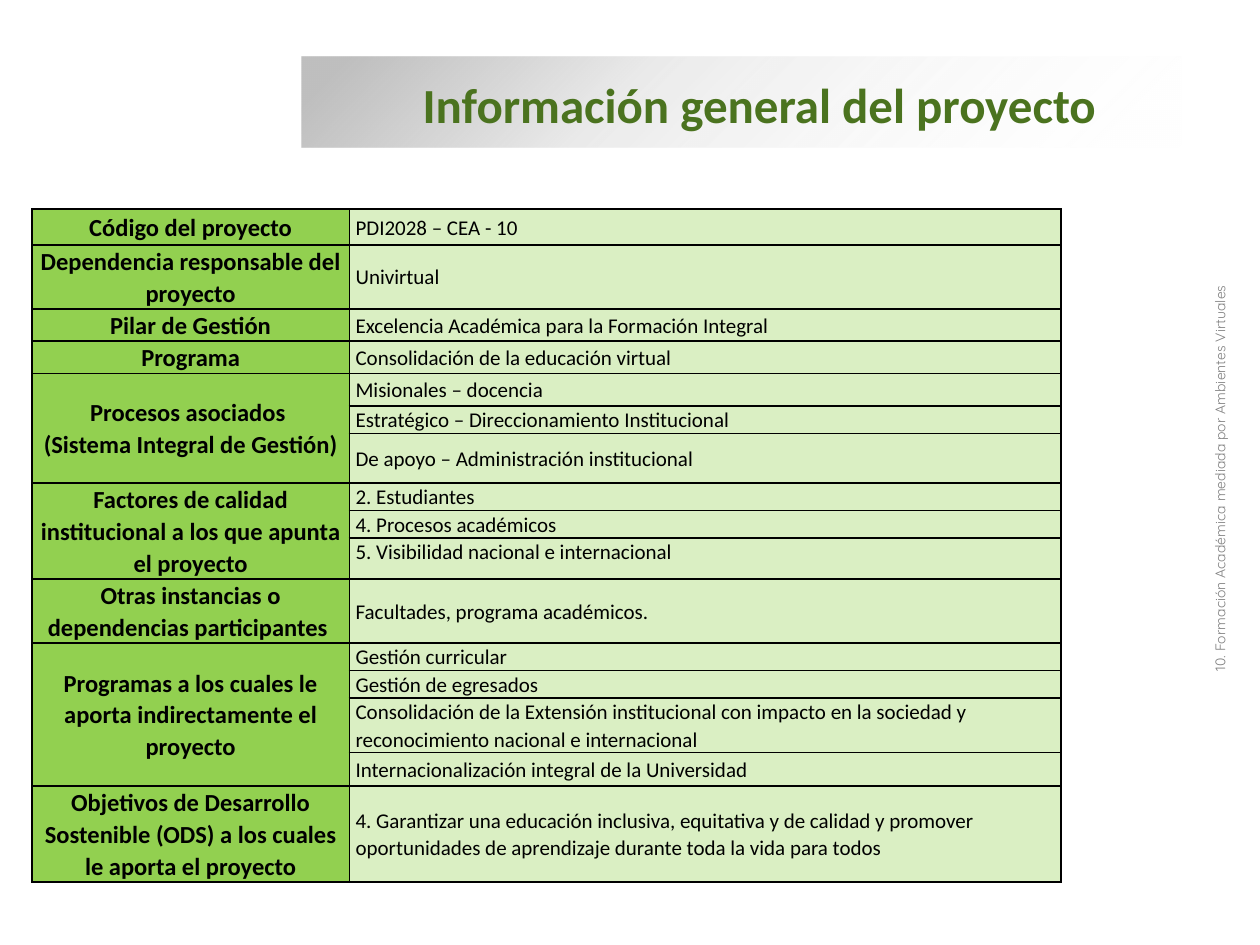
from collections import namedtuple
from dataclasses import dataclass

from lxml import etree
from pptx import Presentation
from pptx.dml.color import RGBColor
from pptx.enum.shapes import MSO_SHAPE as Shape
from pptx.enum.text import MSO_ANCHOR as Anchor, MSO_AUTO_SIZE as AutoSize, PP_ALIGN as Align
from pptx.oxml import parse_xml
from pptx.oxml.ns import nsdecls, qn
from pptx.util import Pt

Box = namedtuple("Box", "left top width height")


@dataclass(frozen=True)
class Theme:
    body_font: str = "Calibri"
    side_font: str = "Quicksand"
    title_size: float = 28
    label_size: float = 14
    value_size: float = 12
    side_size: float = 8
    title: str = "4B731F"
    text: str = "000000"
    side: str = "808080"
    label_fill: str = "92D050"
    value_fill: str = "DAEFC3"
    border: str = "000000"
    band: str = "BFBFBF"
    band_end: str = "FFFFFF"


THEME = Theme()

SECTIONS = [
    ("Código del proyecto", [("PDI2028 – CEA - 10", 20.5)]),
    ("Dependencia responsable del proyecto", [("Univirtual", 36.5)]),
    ("Pilar de Gestión", [("Excelencia Académica para la Formación Integral", 18.5)]),
    ("Programa", [("Consolidación de la educación virtual", 18.5)]),
    ("Procesos asociados \v(Sistema Integral de Gestión)", [
        ("Misionales – docencia", 18.5),
        ("Estratégico – Direccionamiento Institucional", 15.5),
        ("De apoyo – Administración institucional", 28.5),
    ]),
    ("Factores de calidad institucional a los que apunta el proyecto", [
        ("2. Estudiantes", 15.5),
        ("4. Procesos académicos", 15.5),
        ("5. Visibilidad nacional e internacional", 23.5),
    ]),
    ("Otras instancias o dependencias participantes ",
     [("Facultades, programa académicos.", 36.5)]),
    ("Programas a los cuales le aporta indirectamente el proyecto", [
        ("Gestión curricular", 15.5),
        ("Gestión de egresados", 15.5),
        ("Consolidación de la Extensión institucional con impacto en la sociedad y "
         "reconocimiento nacional e internacional", 31),
        ("Internacionalización integral de la Universidad", 19),
    ]),
    ("Objetivos de Desarrollo Sostenible (ODS) a los cuales le aporta el proyecto", [
        ("4. Garantizar una educación inclusiva, equitativa y de calidad y promover "
         "oportunidades de aprendizaje durante toda la vida para todos", 55),
    ]),
]
TOP_ALIGNED = {"4. Procesos académicos", "5. Visibilidad nacional e internacional"}
JUSTIFIED = {"Facultades, programa académicos."}


def points(box):
    return [Pt(length) for length in box]


def write(frame, text, font, size, color, bold=False, align=Align.LEFT):
    para = frame.paragraphs[0]
    para.text = text
    para.alignment = align
    para.font.name = font
    para.font.size = Pt(size)
    para.font.bold = bold
    para.font.color.rgb = RGBColor.from_string(color)
    return para


def add_label(shapes, box, text, font, size, color, **style):
    label = shapes.add_textbox(*points(box))
    frame = label.text_frame
    frame.word_wrap = True
    frame.auto_size = AutoSize.SHAPE_TO_FIT_TEXT
    write(frame, text, font, size, color, **style)
    return label


def fade(shape):
    stops = [(5, THEME.band, 100), (37, THEME.band, 31), (100, THEME.band_end, 0)]
    marks = "".join(
        f'<a:gs pos="{place * 1000}"><a:srgbClr val="{color}">'
        f'<a:alpha val="{alpha * 1000}"/></a:srgbClr></a:gs>'
        for place, color, alpha in stops
    )
    gradient = parse_xml(
        f'<a:gradFill {nsdecls("a")} rotWithShape="1"><a:gsLst>{marks}</a:gsLst>'
        '<a:lin ang="2700000" scaled="0"/></a:gradFill>'
    )
    shape._element.spPr.find(qn("a:prstGeom")).addnext(gradient)


def add_title(page, box):
    group = page.shapes.add_group_shape()
    band = group.shapes.add_shape(Shape.RECTANGLE, *points(box))
    band.shadow.inherit = False
    band.line.fill.background()
    fade(band)
    text_box = Box(box.left + 62, box.top + 6.5, 446.5, 41)
    title = add_label(group.shapes, text_box, "Información general del proyecto",
                      THEME.body_font, THEME.title_size, THEME.title, bold=True)
    title.text_frame.vertical_anchor = Anchor.MIDDLE


def add_borders(cell):
    properties = cell._tc.get_or_add_tcPr()
    for side in ("lnL", "lnR", "lnT", "lnB"):
        line = etree.SubElement(properties, qn(f"a:{side}"), w=str(Pt(1)))
        fill = etree.SubElement(line, qn("a:solidFill"))
        etree.SubElement(fill, qn("a:srgbClr"), val=THEME.border)


def fill_cell(cell, text, size, inset, **style):
    cell.margin_left = cell.margin_right = Pt(inset)
    cell.vertical_anchor = Anchor.TOP if text in TOP_ALIGNED else Anchor.MIDDLE
    para = write(cell.text_frame, text, THEME.body_font, size, THEME.text, **style)
    para.line_spacing = 1.07
    if text in TOP_ALIGNED:
        para.space_after = Pt(8)


def add_project_table(page, box, label_width):
    heights = [height for _, values in SECTIONS for _, height in values]
    table = page.shapes.add_table(len(heights), 2, *points(box)).table
    table.first_row = table.horz_banding = False
    table.columns[0].width = Pt(label_width)
    table.columns[1].width = Pt(box.width - label_width)
    for row, height in zip(table.rows, heights):
        row.height = Pt(height)
        for cell, color in zip(row.cells, (THEME.label_fill, THEME.value_fill)):
            cell.margin_top = cell.margin_bottom = 0
            add_borders(cell)
            cell.fill.solid()
            cell.fill.fore_color.rgb = RGBColor.from_string(color)
    first = 0
    for label, values in SECTIONS:
        heading = table.cell(first, 0)
        if len(values) > 1:
            heading.merge(table.cell(first + len(values) - 1, 0))
        fill_cell(heading, label, THEME.label_size, 3, bold=True, align=Align.CENTER)
        for index, (value, _) in enumerate(values, first):
            align = Align.JUSTIFY if value in JUSTIFIED else Align.LEFT
            fill_cell(table.cell(index, 1), value, THEME.value_size, 3.6, align=align)
        first += len(values)


def add_side_label(page, box):
    label = add_label(page.shapes, box,
                      "10. Formación Académica mediada por Ambientes Virtuales",
                      THEME.side_font, THEME.side_size, THEME.side, align=Align.CENTER)
    label.rotation = 270


def main():
    deck = Presentation()
    deck.slide_width, deck.slide_height = Pt(720), Pt(540)
    page = deck.slides.add_slide(deck.slide_layouts[6])
    add_project_table(page, Box(18.3, 119.5, 588, 384), 181.3)
    add_title(page, Box(172.5, 32.3, 502.5, 52))
    add_side_label(page, Box(527.8, 260, 348.5, 26.6))
    deck.save("out.pptx")


if __name__ == "__main__":
    main()
